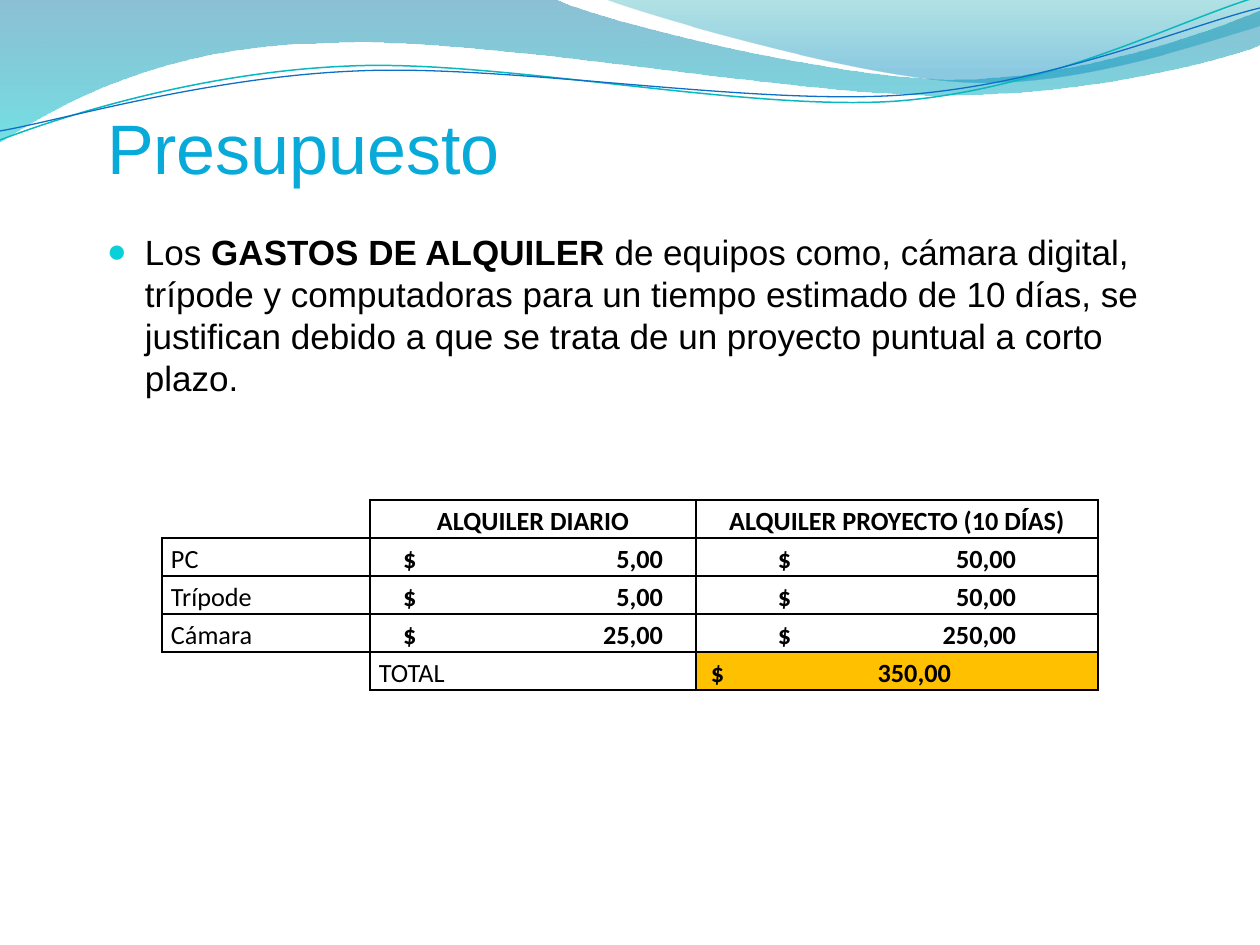
from pptx import Presentation
from pptx.dml.color import RGBColor
from pptx.enum.text import MSO_ANCHOR, PP_ALIGN
from pptx.oxml.ns import qn
from pptx.util import Pt
from lxml.etree import SubElement

SCALE = 914400 / 126  # EMU in one px
BLACK = "000000"


def emu(px):
    return round(px * SCALE)


def color(value):
    return RGBColor.from_string(value)


def add_xml(parent, tag, **attributes):
    return SubElement(parent, qn(tag), {key: str(item) for key, item in attributes.items()})


def add_text(para, text, font="Arial", size=20, fill=BLACK, bold=False):
    span = para.add_run()
    span.text = text
    span.font.name = font
    span.font.size = Pt(size)
    span.font.bold = bold
    span.font.color.rgb = color(fill)


class SlideWriter:
    table_font = "Calibri"
    table_size = 15
    cell_inset = 9

    def __init__(self, slide):
        self.slide = slide

    def outline(self, start, steps, close):
        """Draw steps of one point (line) or three points (Bézier curve)."""
        points = [(emu(x), emu(y)) for step in steps for x, y in step]
        builder = self.slide.shapes.build_freeform(*map(emu, start), scale=1.0)
        builder.add_line_segments(points, close=close)
        shape = builder.convert_to_shape()
        shape.shadow.inherit = False
        segments = iter(list(shape._element.spPr.iter(qn("a:lnTo"))))
        for step in steps:
            first, *others = [next(segments) for _ in step]
            if others:
                first.tag = qn("a:cubicBezTo")
            for other in others:
                first.append(other[0])
                other.getparent().remove(other)
        return shape

    def wave(self, start, steps, stops):
        shape = self.outline(start, steps, True)
        shape.line.fill.background()
        shape.fill.gradient()
        shape.fill.gradient_angle = 270
        for stop, (position, value, _) in zip(shape.fill.gradient_stops, stops):
            stop.position = position
            stop.color.rgb = color(value)
        for node, (_, _, opacity) in zip(shape._element.spPr.iter(qn("a:srgbClr")), stops):
            add_xml(node, "a:alpha", val=opacity * 1000)

    def curve(self, start, steps, value, width):
        shape = self.outline(start, steps, False)
        shape.fill.background()
        shape.line.color.rgb = color(value)
        shape.line.width = Pt(width)

    def text_box(self, left, top, width, height, inset=0, bottom=0, anchor=MSO_ANCHOR.TOP):
        box = self.slide.shapes.add_textbox(*map(emu, (left, top, width, height)))
        frame = box.text_frame
        frame.word_wrap = True
        frame.vertical_anchor = anchor
        frame.margin_left = frame.margin_right = emu(inset)
        frame.margin_top, frame.margin_bottom = emu(6), emu(bottom)
        return frame.paragraphs[0]

    def bullet(self, para, char, value, indent, percent):
        properties = para._p.get_or_add_pPr()
        properties.set("marL", str(emu(indent)))
        properties.set("indent", str(-emu(indent)))
        add_xml(add_xml(properties, "a:buClr"), "a:srgbClr", val=value)
        add_xml(properties, "a:buSzPct", val=percent * 1000)
        add_xml(properties, "a:buFont", typeface="Arial")
        add_xml(properties, "a:buChar", char=char)

    def table(self, left, top, columns, row_height, row_count):
        frame = self.slide.shapes.add_table(
            row_count, len(columns), *map(emu, (left, top, sum(columns), row_height * row_count)))
        table = frame.table
        table.first_row = table.horz_banding = False
        for column, width in zip(table.columns, columns):
            column.width = emu(width)
        for row in table.rows:
            row.height = emu(row_height)
        return table

    def cell(self, cell, text, bold=False, align=PP_ALIGN.LEFT, fill=None,
             sides="LRTB", inset=cell_inset, tab=None):
        cell.margin_left, cell.margin_right = emu(inset), emu(self.cell_inset)
        cell.margin_top = cell.margin_bottom = 0
        cell.vertical_anchor = MSO_ANCHOR.BOTTOM
        self.borders(cell, sides)
        if fill:
            cell.fill.solid()
            cell.fill.fore_color.rgb = color(fill)
        else:
            cell.fill.background()
        para = cell.text_frame.paragraphs[0]
        para.alignment = align
        para.line_spacing = 1.15
        para.space_after = Pt(6)
        if tab:
            tabs = add_xml(para._p.get_or_add_pPr(), "a:tabLst")
            add_xml(tabs, "a:tab", pos=emu(tab), algn="r")
        if text:
            add_text(para, text, self.table_font, self.table_size, bold=bold)
        else:
            add_xml(para._p, "a:endParaRPr", sz=self.table_size * 100)

    def borders(self, cell, sides):
        properties = cell._tc.get_or_add_tcPr()
        for side in "LRTB":
            line = add_xml(properties, f"a:ln{side}", w=Pt(1))
            if side in sides:
                add_xml(add_xml(line, "a:solidFill"), "a:srgbClr", val=BLACK)
            else:
                add_xml(line, "a:noFill")


def main():
    deck = Presentation()
    deck.slide_width, deck.slide_height = emu(1260), emu(945)
    page = SlideWriter(deck.slides.add_slide(deck.slide_layouts[6]))

    # Wave header
    page.wave((0, 0), [
        [(554, -1)],
        [(600, 21), (837, 79), (955, 79)],
        [(1075, 79), (1207, 33), (1260, 11)],
        [(1261, 45)],
        [(1239, 55), (1096, 96), (940, 95)],
        [(784, 95), (481, 35), (324, 43)],
        [(163, 45), (58, 105), (-1, 142)],
    ], [(0, "0074A1", 45), (1, "00C6CF", 55)])
    page.wave((604, -1), [
        [(641, 14), (859, 78), (969, 82)],
        [(1079, 87), (1211, 40), (1260, 26)],
        [(1260, 0)],
    ], [(0, "00A1A9", 30), (0.8, "008BBF", 45)])
    page.curve((0, 140), [
        [(60, 117), (199, 72), (349, 66)],
        [(498, 59), (747, 112), (898, 101)],
        [(1049, 89), (1182, 19), (1257, -3)],
    ], "0AB8BF", 0.85)
    page.curve((0, 131), [
        [(59, 121), (207, 77), (357, 71)],
        [(508, 64), (752, 106), (903, 95)],
        [(1053, 84), (1186, 26), (1260, 8)],
    ], "0F6FC6", 0.75)

    # Title
    title = page.text_box(107, 86, 1050, 103, anchor=MSO_ANCHOR.BOTTOM)
    add_text(title, "Presupuesto", size=40, fill="07AAD8")

    # Explanation
    body = page.text_box(94, 224, 1111, 207, inset=13, bottom=6)
    body.space_before = Pt(4)
    page.bullet(body, "●", "0BD0D9", 38, 95)
    add_text(body, "Los ")
    add_text(body, "GASTOS DE ALQUILER ", bold=True)
    add_text(body, "de equipos como, cámara digital, trípode y computadoras para un tiempo "
                   "estimado de 10 días, se justifican debido a que se trata de un proyecto "
                   "puntual a corto plazo.")

    # Rental costs
    items = [("PC", "5,00", "50,00"), ("Trípode", "5,00", "50,00"), ("Cámara", "25,00", "250,00")]
    table = page.table(162, 500, (208, 326, 402), 38, len(items) + 2)
    page.cell(table.cell(0, 0), "", sides="RB")
    for index, heading in enumerate(("ALQUILER DIARIO", "ALQUILER PROYECTO (10 DÍAS)"), 1):
        page.cell(table.cell(0, index), heading, bold=True, align=PP_ALIGN.CENTER)
    for index, (item, daily, project) in enumerate(items, 1):
        page.cell(table.cell(index, 0), item)
        page.cell(table.cell(index, 1), f"$\t{daily}", bold=True, inset=33, tab=260)
        page.cell(table.cell(index, 2), f"$\t{project}", bold=True, inset=82, tab=238)
    total = len(items) + 1
    page.cell(table.cell(total, 0), "", sides="RT")
    page.cell(table.cell(total, 1), "TOTAL")
    page.cell(table.cell(total, 2), "$\t350,00", bold=True, fill="FFC000", inset=15, tab=240)

    deck.save("out.pptx")


if __name__ == "__main__":
    main()
